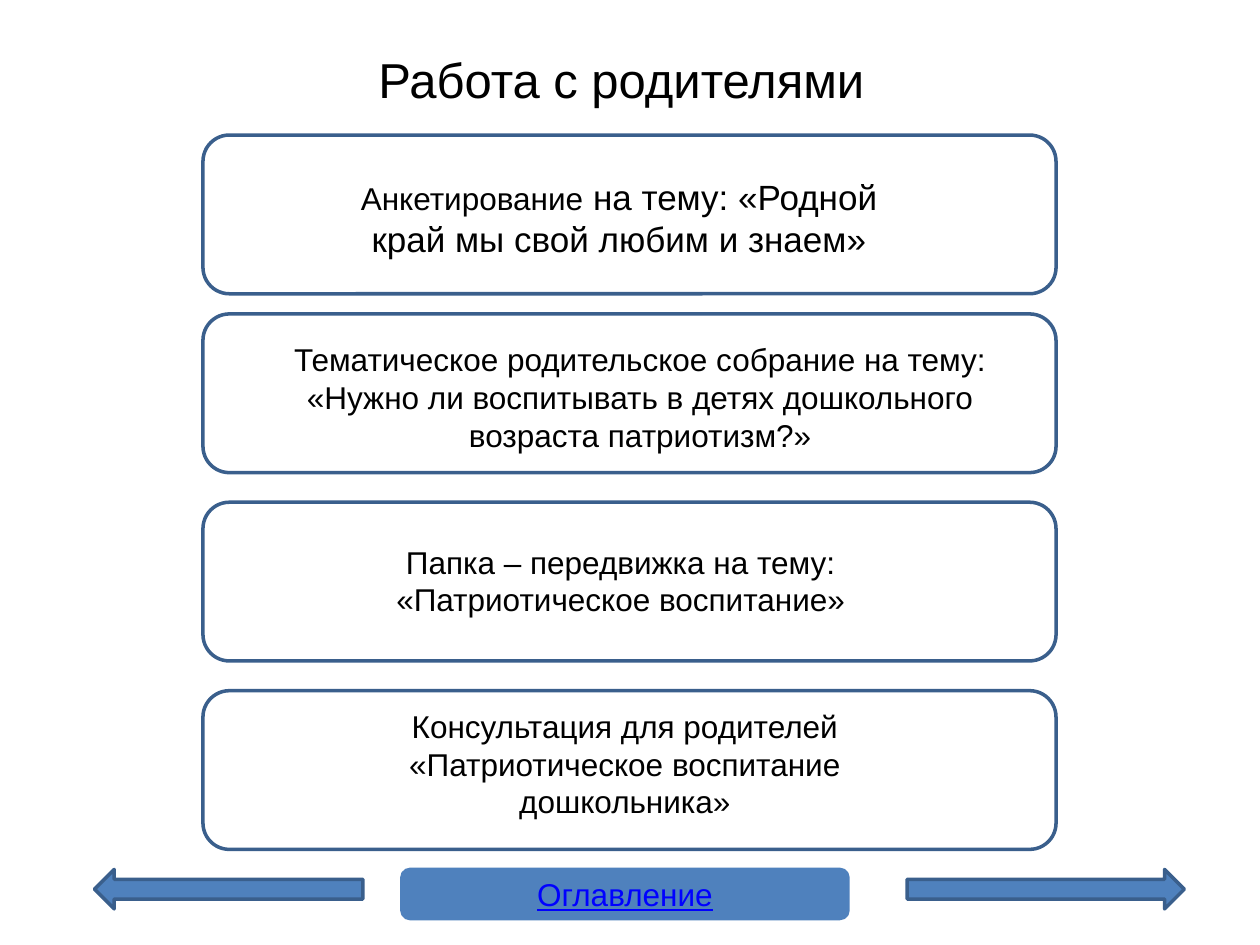
import pptx
import pptx.dml.color
import pptx.enum.shapes
import pptx.enum.text
import pptx.util
from dataclasses import dataclass

Pt = pptx.util.Pt
Kind = pptx.enum.shapes.MSO_SHAPE
Anchor = pptx.enum.text.MSO_ANCHOR


@dataclass(frozen=True)
class Theme:
    """Colours, font and type sizes of the slide."""
    font: str = "Arial"
    ink: str = "000000"
    link: str = "0000FF"
    paper: str = "FFFFFF"
    blue: str = "4F81BD"
    edge: str = "3A5F8C"
    head: int = 28
    large: int = 20
    body: int = 18
    line: int = 2


THEME = Theme()


def color(code):
    """Turn a hex code into a colour."""
    return pptx.dml.color.RGBColor.from_string(code)


def write(frame, parts, anchor, ink=THEME.ink, under=None):
    """Fill a frame with one centred paragraph of (text, size) parts."""
    frame.word_wrap = True
    frame.vertical_anchor = anchor
    para = frame.paragraphs[0]
    para.alignment = pptx.enum.text.PP_ALIGN.CENTER
    for text, size in parts:
        run = para.add_run()
        run.text = text
        run.font.name = THEME.font
        run.font.size = Pt(size)
        run.font.color.rgb = color(ink)
        run.font.underline = under


def label(slide, box, parts, anchor=Anchor.TOP):
    """Place a text box."""
    text = slide.shapes.add_textbox(*map(Pt, box))
    write(text.text_frame, parts, anchor)


def block(slide, kind, box, fill, edge):
    """Place a filled and outlined shape."""
    shape = slide.shapes.add_shape(kind, *map(Pt, box))
    shape.shadow.inherit = False
    shape.fill.solid()
    shape.fill.fore_color.rgb = color(fill)
    shape.line.color.rgb = color(edge)
    shape.line.width = Pt(THEME.line)
    return shape


def card(slide, box, inset, parts):
    """Draw a rounded card with its text inset from the corner."""
    left, top, _, _ = box
    right, down, width, height = inset
    block(slide, Kind.ROUNDED_RECTANGLE, box, THEME.paper, THEME.edge)
    label(slide, (left + right, top + down, width, height), parts)


def footer(slide, box):
    """Draw the contents button between the two arrows."""
    left, top, width, height = box
    button = block(slide, Kind.ROUNDED_RECTANGLE,
                   (left + 175.7, top, 254.9, height), THEME.blue, THEME.blue)
    write(button.text_frame, [("Оглавление", THEME.body)],
          Anchor.MIDDLE, THEME.link, True)
    long = 158.4
    arrows = [(Kind.LEFT_ARROW, left, 153.4),
              (Kind.RIGHT_ARROW, left + width - long, long)]
    for kind, start, span in arrows:
        block(slide, kind, (start, top, span, 22.6), THEME.blue, THEME.edge)


def main():
    """Build and save the slide."""
    deck = pptx.Presentation()
    deck.slide_width, deck.slide_height = Pt(720), Pt(540)
    slide = deck.slides.add_slide(deck.slide_layouts[6])
    label(slide, (31, 0, 648, 90),
          [("Работа с родителями", THEME.head)], Anchor.MIDDLE)
    cards = [
        (77.2, (65, 19.4, 345.6, 55.7),
         [("Анкетирование", THEME.body),
          (" на тему: «Родной край мы свой любим и знаем»", THEME.large)]),
        (179.4, (23, 11.5, 453.6, 94.3),
         [("Тематическое родительское собрание на тему: «Нужно ли "
           "воспитывать в детях дошкольного возраста патриотизм?»",
           THEME.body)]),
        (287, (88.6, 19.5, 300.2, 51),
         [("Папка – передвижка на тему: «Патриотическое воспитание»",
           THEME.body)]),
        (394.7, (62.6, 5.7, 357, 72.7),
         [("Консультация для родителей «Патриотическое воспитание "
           "дошкольника»", THEME.body)]),
    ]
    for top, inset, parts in cards:
        card(slide, (116, top, 487.5, 90.7), inset, parts)
    footer(slide, (54, 496.8, 622.8, 28.1))
    deck.save("out.pptx")


if __name__ == "__main__":
    main()
